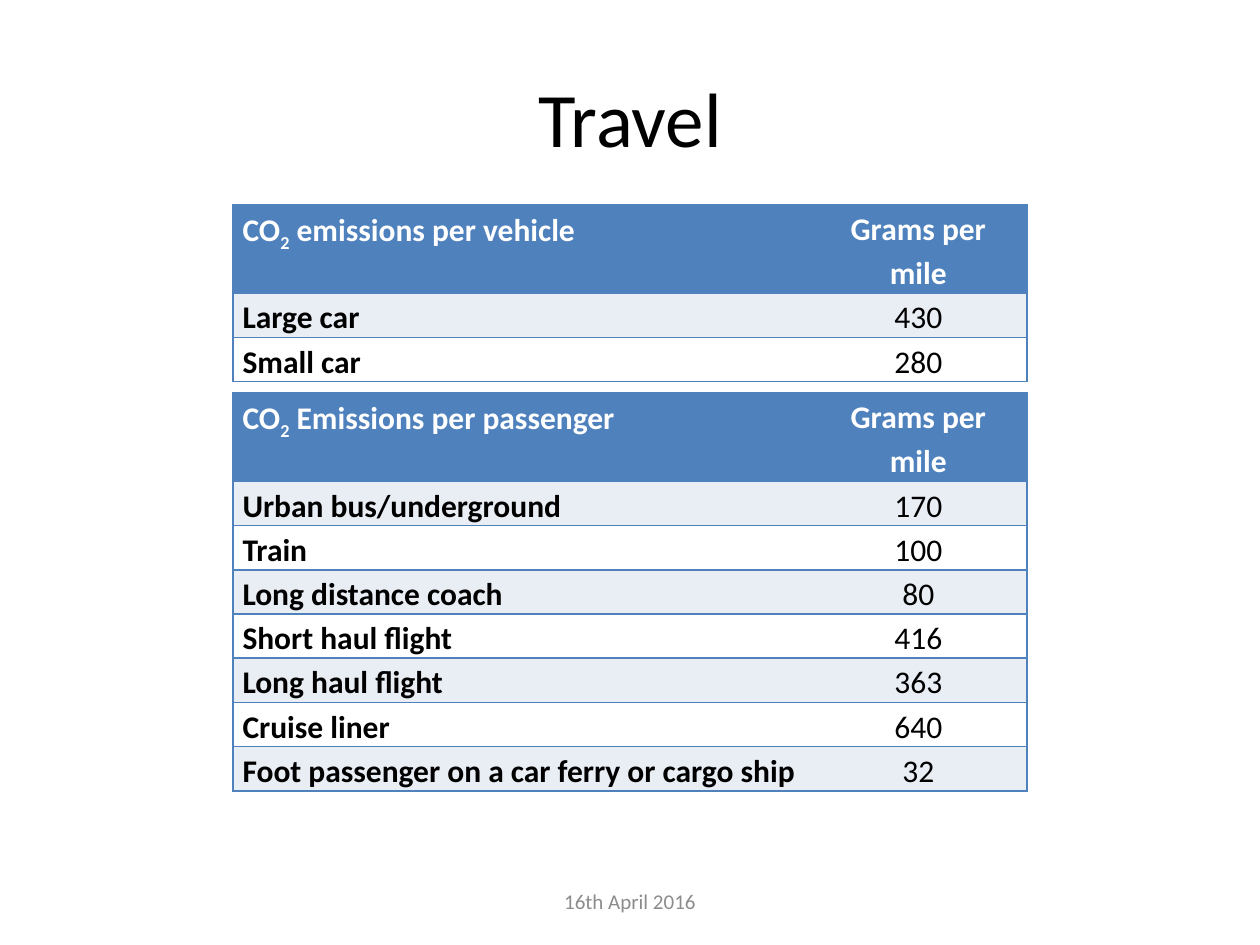
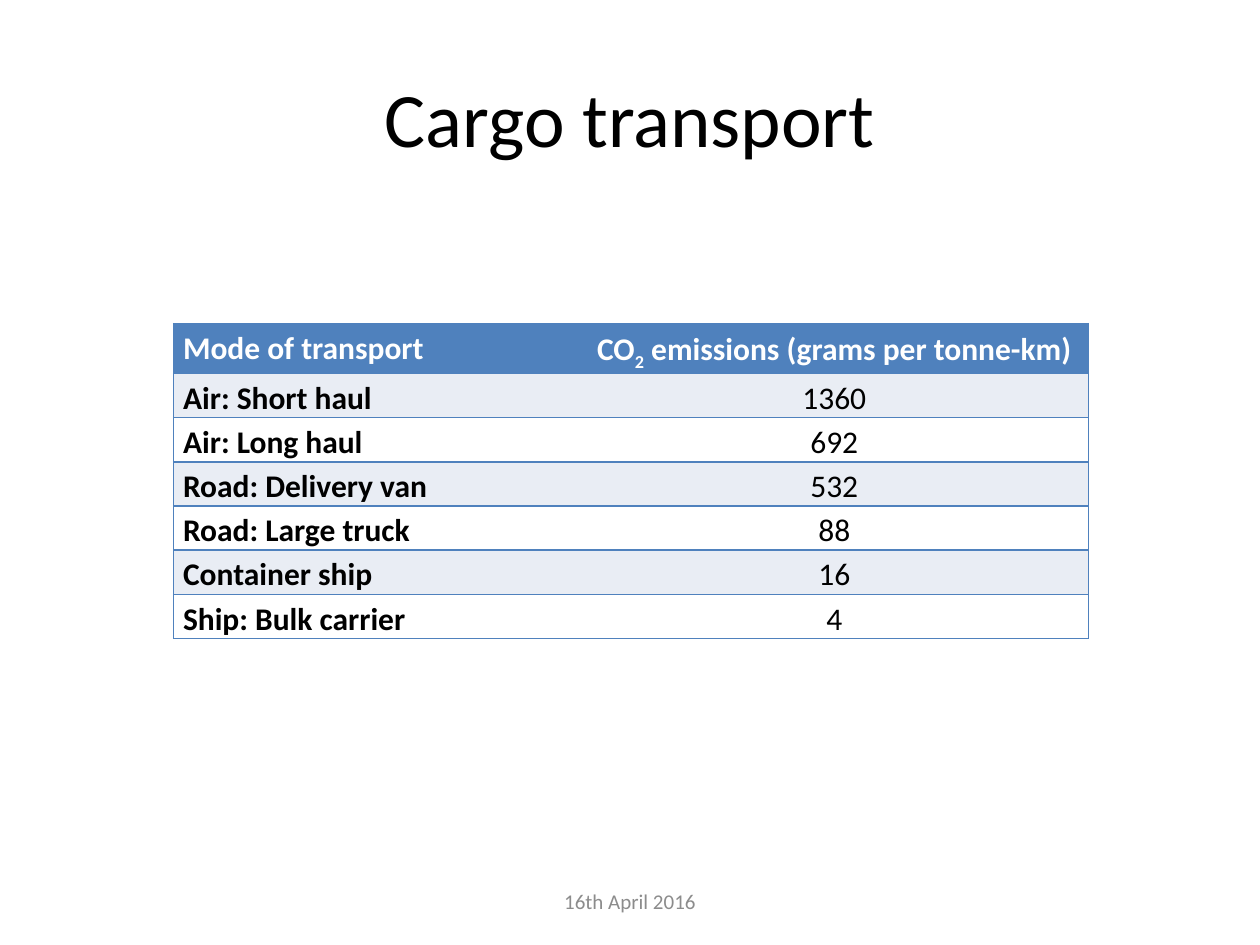
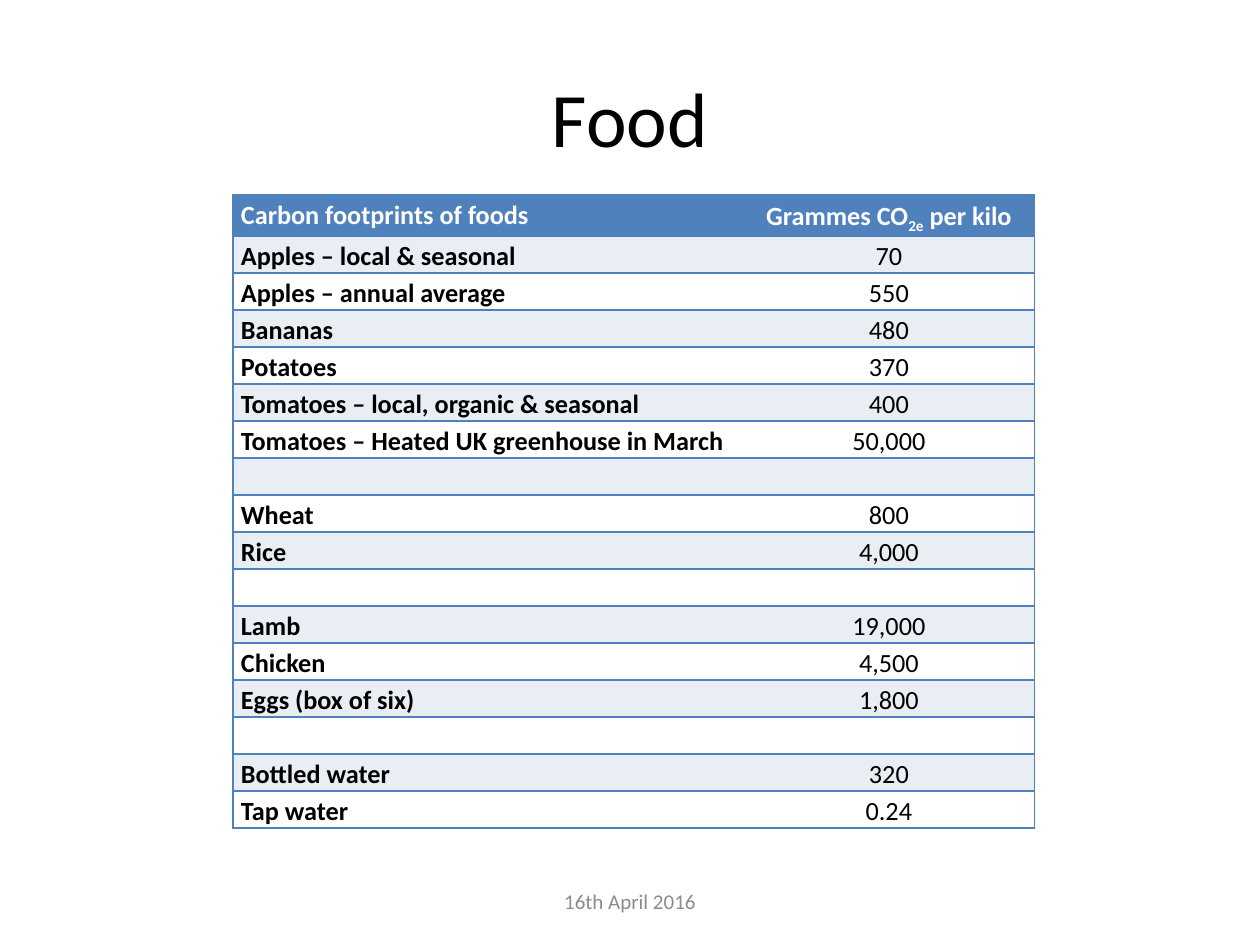
from dataclasses import dataclass

from lxml import etree
from pptx import Presentation
from pptx import util as u
from pptx.dml import color
from pptx.enum import text
from pptx.oxml import ns

Pt = u.Pt
FACE = "Calibri"
DATE = "16th April 2016"
HEX = {"blue": "4F81BD", "pale": "E9EDF4", "white": "FFFFFF",
       "black": "000000", "grey": "8C8C8C"}
MID = text.PP_ALIGN.CENTER
LEFT = text.PP_ALIGN.LEFT


@dataclass
class Grid:
    """A two-column table; text between bars in the head is subscript."""
    left: float
    top: float
    cols: tuple[float, float]
    head: tuple[str, str]
    rows: list[tuple[str, str]]
    tall: float            # height of the head row
    high: float = 25.27    # height of each other row
    size: float = 18
    inset: float = 5.4


@dataclass
class Page:
    title: str
    grids: list[Grid]


BLANK = ("", "")
PAGES = [
    Page("Travel", [
        Grid(133.2, 117, (329.6, 124),
             ("CO|2| emissions per vehicle", "Grams per mile"),
             [("Large car", "430"), ("Small car", "280")], 50.5),
        Grid(133.2, 224.6, (329.6, 124),
             ("CO|2| Emissions per passenger", "Grams per mile"),
             [("Urban bus/underground", "170"), ("Train", "100"),
              ("Long distance coach", "80"), ("Short haul flight", "416"),
              ("Long haul flight", "363"), ("Cruise liner", "640"),
              ("Foot passenger on a car ferry or cargo ship", "32")], 50.5),
    ]),
    Page("Cargo transport", [
        Grid(99.2, 185, (232.3, 290.5),
             ("Mode of transport", "CO|2| emissions (grams per tonne-km)"),
             [("Air: Short haul", "1360"), ("Air: Long haul", "692"),
              ("Road: Delivery van", "532"), ("Road: Large truck", "88"),
              ("Container ship", "16"), ("Ship: Bulk carrier", "4")], 28.4),
    ]),
    Page("Food", [
        Grid(133.2, 111.3, (291.6, 166.3),
             ("Carbon footprints of foods", "Grammes CO|2e| per kilo"),
             [("Apples – local & seasonal", "70"),
              ("Apples – annual average", "550"),
              ("Bananas", "480"), ("Potatoes", "370"),
              ("Tomatoes – local, organic & seasonal", "400"),
              ("Tomatoes – Heated UK greenhouse in March", "50,000"),
              BLANK, ("Wheat", "800"), ("Rice", "4,000"),
              BLANK, ("Lamb", "19,000"), ("Chicken", "4,500"),
              ("Eggs (box of six)", "1,800"),
              BLANK, ("Bottled water", "320"), ("Tap water", "0.24")],
             23.1, 21.15, 15, 4.5),
    ]),
]


def style(par, size: float, tone: str, align, bold: bool = False) -> None:
    par.alignment = align
    font = par.font
    font.name, font.size, font.bold = FACE, Pt(size), bold
    font.color.rgb = color.RGBColor.from_string(HEX[tone])


def edge(cell, sides: str) -> None:
    """Rule the named sides in blue and leave the others bare."""
    props = cell._tc.get_or_add_tcPr()
    for side in "LRTB":
        line = etree.SubElement(props, ns.qn(f"a:ln{side}"), w=str(Pt(1)))
        if side in sides:
            fill = etree.SubElement(line, ns.qn("a:solidFill"))
            etree.SubElement(fill, ns.qn("a:srgbClr"), val=HEX["blue"])
        else:
            etree.SubElement(line, ns.qn("a:noFill"))


def write(par, words: str, size: float) -> None:
    for i, part in enumerate(words.split("|")):
        if part:
            run = par.add_run()
            run.text = part
            if i % 2:
                run.font._element.set("baseline", "-25000")
    if not words:  # keeps an empty row at its height
        par._p.get_or_add_endParaRPr().set("sz", str(int(size * 100)))


def draw_grid(slide, grid: Grid) -> None:
    lines = [grid.head, *grid.rows]
    high = grid.tall + grid.high * len(grid.rows)
    table = slide.shapes.add_table(
        len(lines), 2, Pt(grid.left), Pt(grid.top),
        Pt(sum(grid.cols)), Pt(high)).table
    table.first_row = table.horz_banding = False
    for col, width in zip(table.columns, grid.cols):
        col.width = Pt(width)
    for r, line in enumerate(lines):
        table.rows[r].height = Pt(grid.high if r else grid.tall)
        fill = "blue" if r == 0 else "pale" if r % 2 else "white"
        for c, words in enumerate(line):
            cell = table.cell(r, c)
            cell.margin_left = cell.margin_right = Pt(grid.inset)
            cell.margin_top = cell.margin_bottom = 0
            edge(cell, "RTB" if c else "LTB")
            cell.fill.solid()
            cell.fill.fore_color.rgb = color.RGBColor.from_string(HEX[fill])
            par = cell.text_frame.paragraphs[0]
            par.line_spacing = 1.15
            style(par, grid.size, "black" if r else "white",
                  MID if c else LEFT, bold=r == 0 or c == 0)
            write(par, words, grid.size)


def draw_title(slide, words: str) -> None:
    title = slide.shapes.title
    title.left, title.top = Pt(36), Pt(21.6)
    title.width, title.height = Pt(648), Pt(90)
    title.text_frame.text = words
    title.text_frame.vertical_anchor = text.MSO_ANCHOR.MIDDLE
    style(title.text_frame.paragraphs[0], 44, "black", MID)


def draw_foot(slide) -> None:
    box = slide.shapes.add_textbox(Pt(246), Pt(500.5), Pt(228), Pt(28.8))
    frame = box.text_frame
    frame.word_wrap = True
    frame.vertical_anchor = text.MSO_ANCHOR.MIDDLE
    frame.text = DATE
    style(frame.paragraphs[0], 12, "grey", MID)


def main() -> None:
    deck = Presentation()
    deck.slide_width, deck.slide_height = Pt(720), Pt(540)
    for page in PAGES:
        slide = deck.slides.add_slide(deck.slide_layouts[5])
        draw_title(slide, page.title)
        draw_foot(slide)
        for grid in page.grids:
            draw_grid(slide, grid)
    deck.save("out.pptx")


if __name__ == "__main__":
    main()
